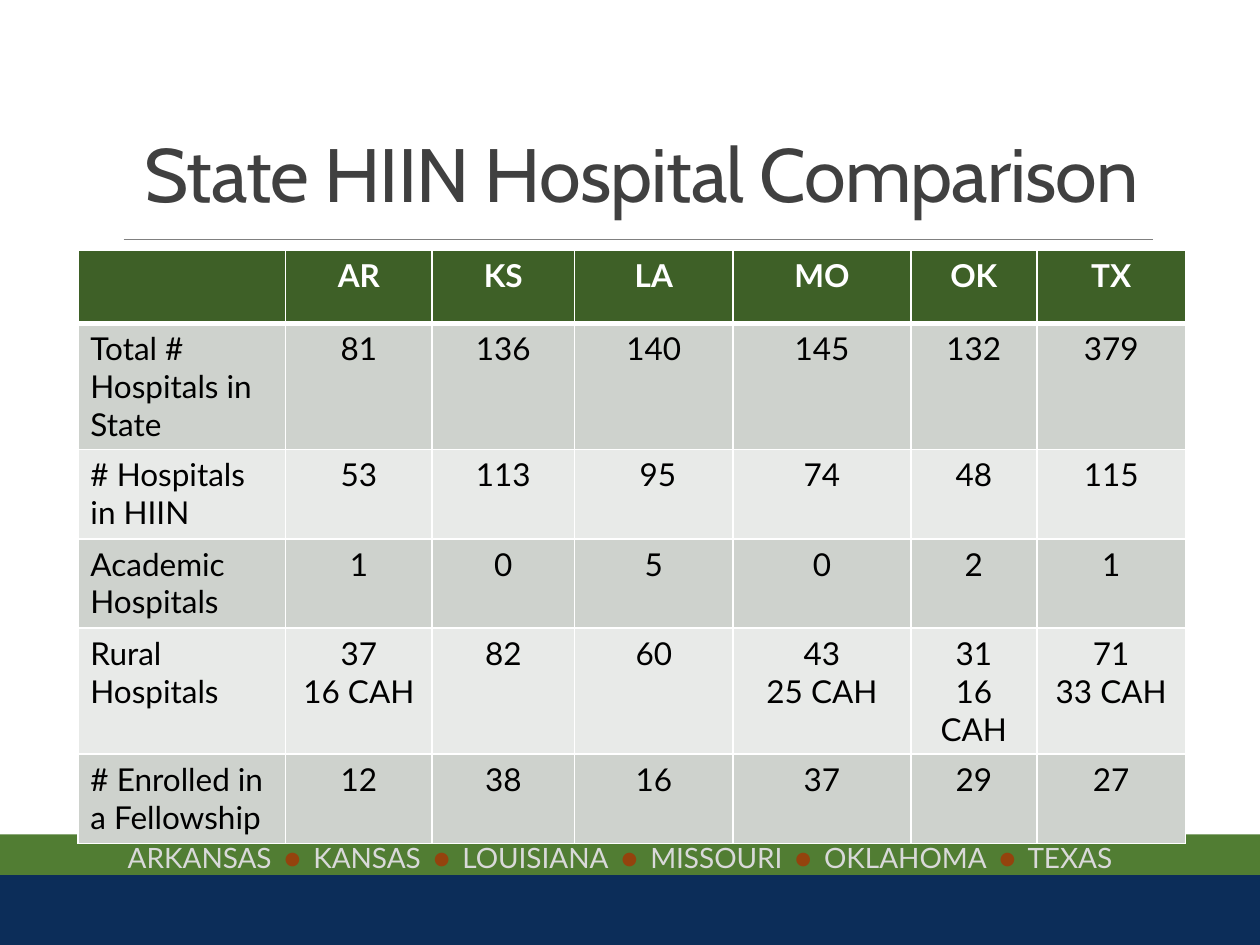
from lxml.etree import SubElement
from pptx import Presentation
from pptx.dml.color import RGBColor
from pptx.enum.shapes import MSO_CONNECTOR, MSO_SHAPE
from pptx.enum.text import MSO_ANCHOR, PP_ALIGN
from pptx.oxml.ns import qn
from pptx.util import Cm, Pt

COLORS = {
    "green": "517D33", "navy": "002060", "rule": "808080", "title": "404040",
    "state": "D9D9D9", "dot": "94430D", "header": "3E6027",
    "odd": "CED2CD", "even": "E8EAE8", "white": "FFFFFF", "black": "000000",
}
STATES = ["ARKANSAS", "KANSAS", "LOUISIANA", "MISSOURI", "OKLAHOMA", "TEXAS"]
COLUMN_WIDTHS = [4.19, 2.95, 2.87, 3.2, 3.58, 2.54, 3]
ROW_HEIGHTS = [1.47, 1.8, 1.8, 1.8, 1.47, 1.8]
HOSPITALS = [
    ["", "AR", "KS", "LA", "MO", "OK", "TX"],
    ["Total # Hospitals in State", "81", "136", "140", "145", "132", "379"],
    ["# Hospitals in HIIN", "53", "113", " 95", "74", "48", "115"],
    ["Academic Hospitals", "1", "0", "5", "0", "2", "1"],
    ["Rural Hospitals", "37\n16 CAH", "82", "60", "43\n25 CAH", "31\n16 CAH", "71\n33 CAH"],
    ["# Enrolled in a Fellowship", "12", "38", "16", "37", "29", "27"],
]


def color(name):
    return RGBColor.from_string(COLORS[name])


def add_band(slide, left, top, width, height, fill, opacity=100):
    band = slide.shapes.add_shape(
        MSO_SHAPE.RECTANGLE, Cm(left), Cm(top), Cm(width), Cm(height))
    band.shadow.inherit = False
    band.fill.solid()
    band.fill.fore_color.rgb = color(fill)
    band.line.fill.background()
    if opacity < 100:
        srgb = band.fill._xPr.find(qn("a:solidFill"))[0]
        SubElement(srgb, qn("a:alpha"), val=str(opacity * 1000))


def add_footer(slide, left, top, width, height):
    add_band(slide, left, top, width, height, "green")
    add_band(slide, left, top + 0.82, width, height - 0.82, "navy", 85)
    states_box = slide.shapes.add_textbox(
        Cm(left + 0.38), Cm(top), Cm(width - 1.16), Cm(0.94))
    states_box.text_frame.word_wrap = True
    line = states_box.text_frame.paragraphs[0]
    line.alignment = PP_ALIGN.CENTER
    for index, state in enumerate(STATES):
        if index:
            dot = line.add_run()
            dot.text = " ●"
            dot.font.color.rgb = color("dot")
            dot._r.get_or_add_rPr().set("spc", "300")
        name = line.add_run()
        name.text = f" {state}" if index else state
        name.font.color.rgb = color("state")
    line.font.size = Pt(16)
    line.font.name = "Lato"
    for run in line.runs:
        run.font.size = Pt(16)
        run.font.name = "Lato"


def add_heading(slide, left, top, width, height):
    rule = slide.shapes.add_connector(
        MSO_CONNECTOR.STRAIGHT, Cm(left + 0.51), Cm(top + height + 0.3),
        Cm(left + 21.26), Cm(top + height + 0.3))
    rule.line.color.rgb = color("rule")
    rule.line.width = Pt(0.5)
    SubElement(rule._element.spPr, qn("a:effectLst"))
    title = slide.shapes.title
    title.left, title.top, title.width, title.height = map(
        Cm, (left, top, width, height))
    title.text_frame.text = "State HIIN Hospital Comparison"
    title.text_frame.vertical_anchor = MSO_ANCHOR.BOTTOM
    heading = title.text_frame.paragraphs[0]
    heading.alignment = PP_ALIGN.CENTER
    heading.line_spacing = 0.85
    heading.font.size = Pt(43.2)
    heading.font.name = "Cabin"
    heading.font.color.rgb = color("title")
    heading.runs[0]._r.get_or_add_rPr().set("spc", "-50")


def set_borders(cell, bottom_width):
    properties = cell._tc.get_or_add_tcPr()
    for side, width in (("L", 1), ("R", 1), ("T", 1), ("B", bottom_width)):
        border = SubElement(properties, qn(f"a:ln{side}"), w=str(Pt(width)))
        fill = SubElement(border, qn("a:solidFill"))
        SubElement(fill, qn("a:srgbClr"), val=COLORS["white"])


def add_comparison(slide, left, top, width, height):
    table = slide.shapes.add_table(
        len(HOSPITALS), len(COLUMN_WIDTHS),
        Cm(left), Cm(top), Cm(width), Cm(height)).table
    for column, column_width in zip(table.columns, COLUMN_WIDTHS):
        column.width = Cm(column_width)
    for row, row_height in zip(table.rows, ROW_HEIGHTS):
        row.height = Cm(row_height)
    for r, values in enumerate(HOSPITALS):
        is_header = r == 0
        row_fill = "header" if is_header else "odd" if r % 2 else "even"
        for c, value in enumerate(values):
            cell = table.cell(r, c)
            set_borders(cell, 3 if is_header else 1)
            cell.fill.solid()
            cell.fill.fore_color.rgb = color(row_fill)
            cell.text_frame.text = value
            for paragraph in cell.text_frame.paragraphs:
                paragraph.alignment = PP_ALIGN.CENTER if c else PP_ALIGN.LEFT
                paragraph.font.size = Pt(18)
                paragraph.font.name = "Lato"
                paragraph.font.bold = is_header
                paragraph.font.color.rgb = color("white" if is_header else "black")


def main():
    presentation = Presentation()
    presentation.slide_width = Cm(25.4)
    presentation.slide_height = Cm(19.05)
    slide = presentation.slides.add_slide(presentation.slide_layouts[5])
    add_footer(slide, 0, 16.82, 25.4, 2.23)
    add_heading(slide, 1.98, 1.52, 21.92, 3)
    add_comparison(slide, 1.57, 5.05, sum(COLUMN_WIDTHS), sum(ROW_HEIGHTS))
    presentation.save("out.pptx")


if __name__ == "__main__":
    main()
